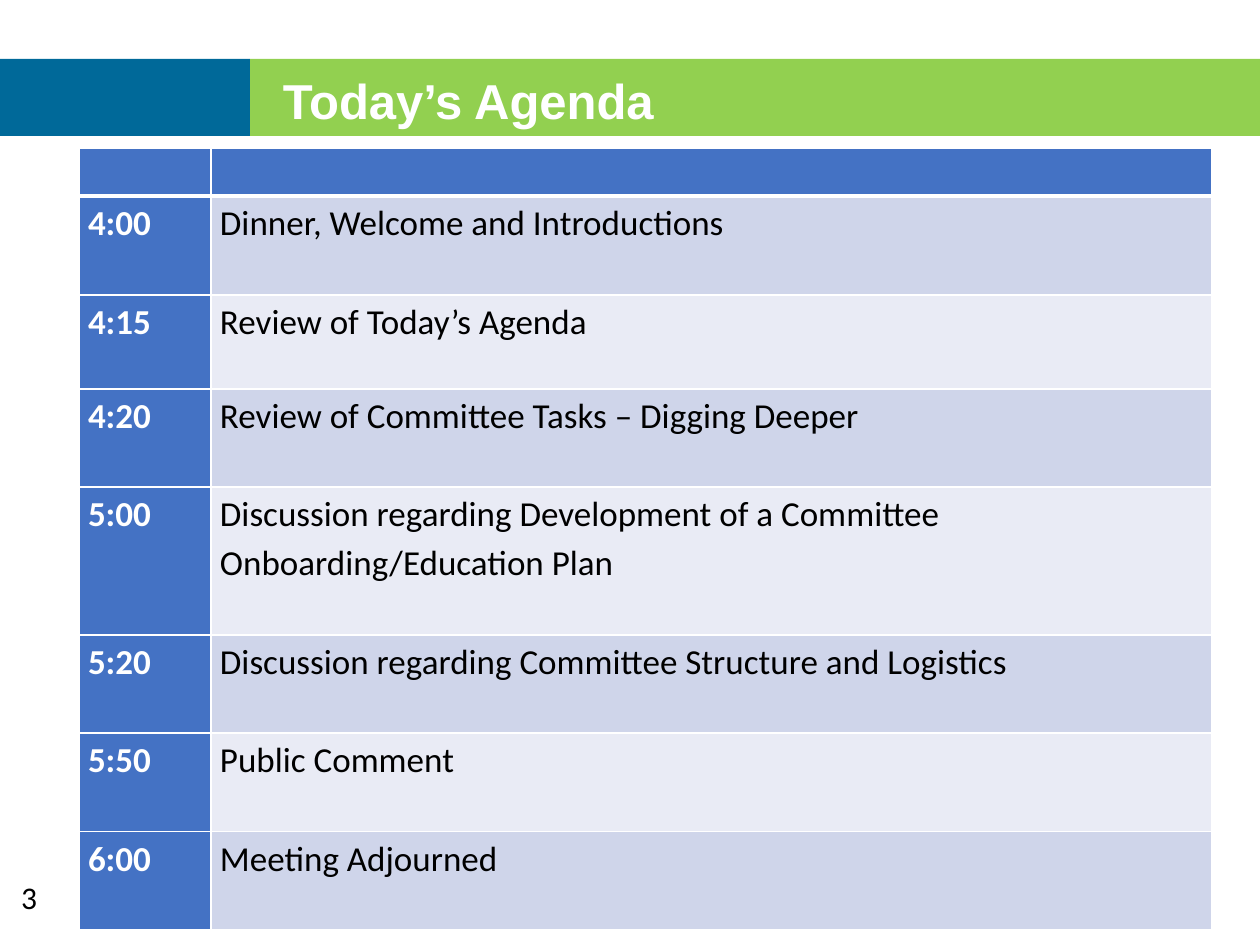
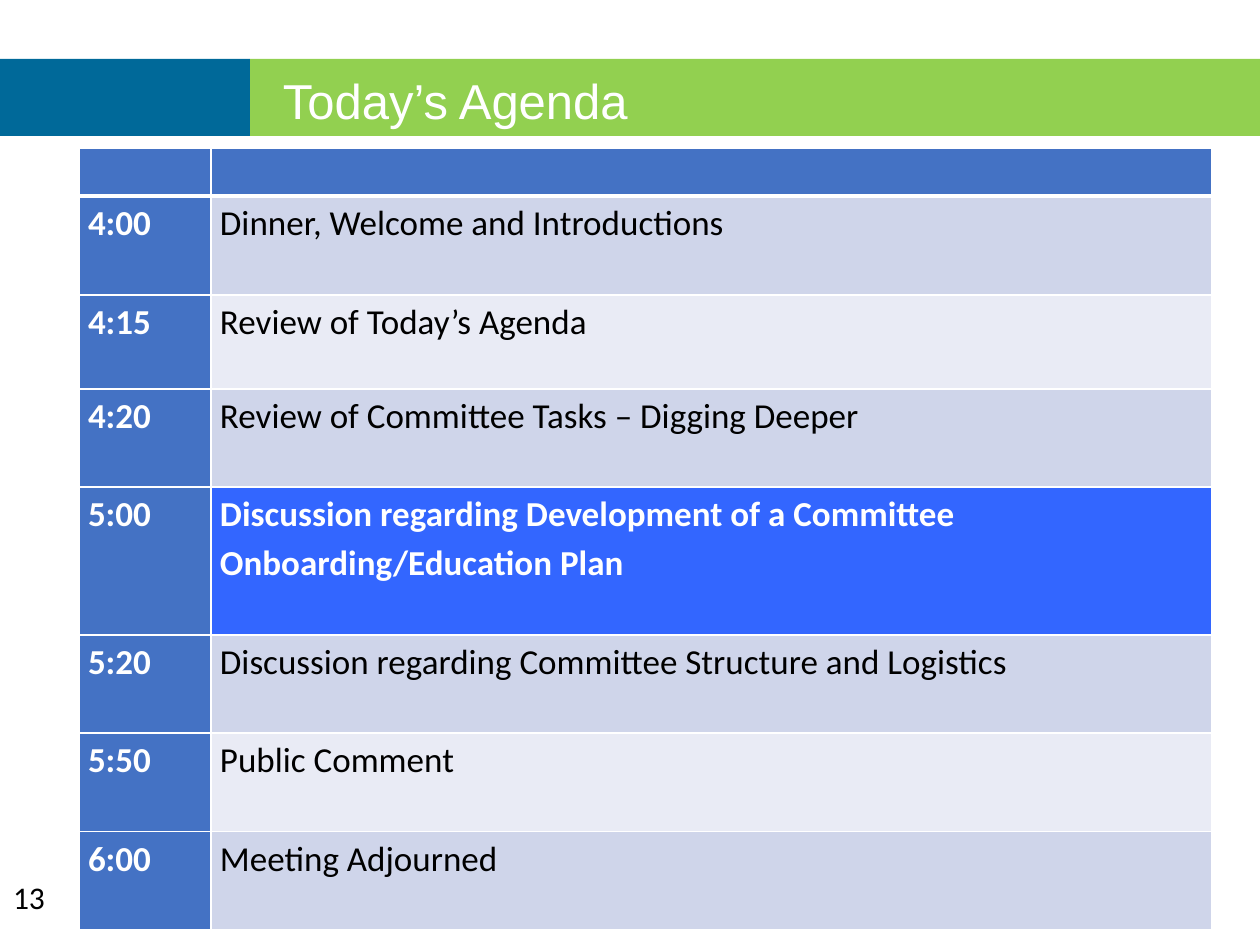
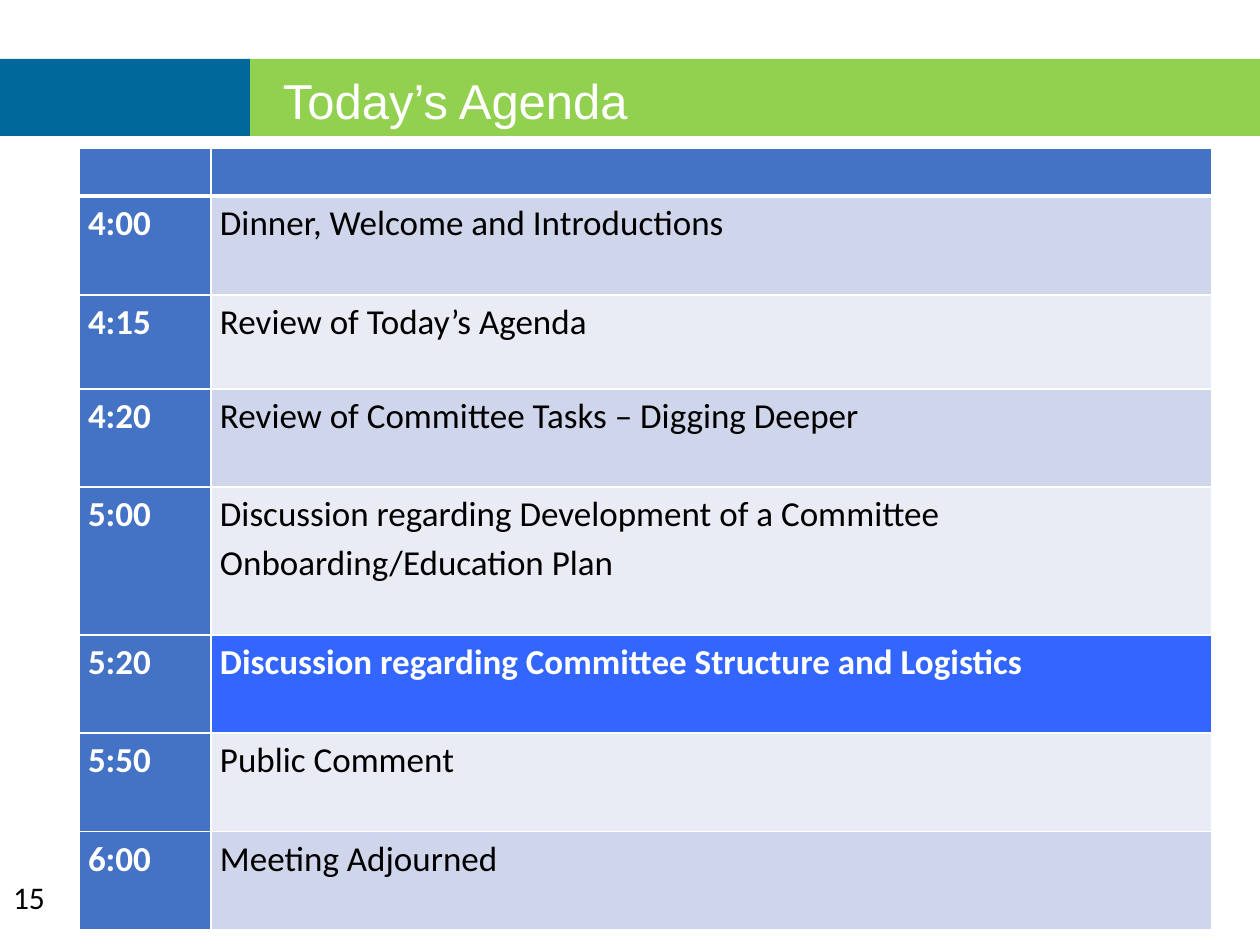
from lxml import etree
from pptx import Presentation, util as u
from pptx.dml.color import RGBColor
from pptx.enum import shapes, text
from pptx.oxml.ns import qn

COLORS = {
    "white": "FFFFFF", "black": "000000", "green": "92D050", "teal": "006999",
    "head": "4472C4", "odd": "CFD5EA", "even": "E9EBF5", "focus": "3366FF",
}
SCALE = 914400 / 126
WIDE, HIGH = 1260, 945

# Time, topic and row height
AGENDA = [
    ("4:00", "Dinner, Welcome and Introductions", 99),
    ("4:15", "Review of Today’s Agenda", 94),
    ("4:20", "Review of Committee Tasks – Digging Deeper", 98),
    ("5:00", "Discussion regarding Development of a Committee "
             "Onboarding/Education Plan", 148),
    ("5:20", "Discussion regarding Committee Structure and Logistics", 98),
    ("5:50", "Public Comment", 99),
    ("6:00", "Meeting Adjourned", 98),
]
HEAD_ROW = 48
COLS = (132, 1001)

# Page number, bold title, time of the current topic
PAGES = [(3, True, None), (13, False, "5:00"), (15, False, "5:20")]


def px(n):
    return u.Emu(round(n * SCALE))


def rgb(name):
    return RGBColor.from_string(COLORS[name])


def put(item, **vals):
    for key, val in vals.items():
        setattr(item, key, val)


class Deck:
    title = dict(name="Arial", size=u.Pt(28))
    page = dict(name="Calibri", size=u.Pt(18))
    body = dict(name="Calibri", size=u.Pt(20))

    def __init__(self):
        self.prs = Presentation()
        put(self.prs, slide_width=px(WIDE), slide_height=px(HIGH))
        self.slide = None

    def start(self):
        self.slide = self.prs.slides.add_slide(self.prs.slide_layouts[6])

    def band(self, x, y, w, h, color):
        box = self.slide.shapes.add_shape(
            shapes.MSO_SHAPE.RECTANGLE, px(x), px(y), px(w), px(h))
        box.shadow.inherit = False
        box.fill.solid()
        box.fill.fore_color.rgb = rgb(color)
        box.line.fill.background()

    def words(self, para, line, color, font, bold=False):
        run = para.add_run()
        run.text = line
        put(run.font, bold=bold, **font)
        run.font.color.rgb = rgb(color)

    def label(self, x, y, w, h, line, color, font, bold=False,
              align=text.PP_ALIGN.LEFT, side=13):
        frame = self.slide.shapes.add_textbox(
            px(x), px(y), px(w), px(h)).text_frame
        put(frame, word_wrap=True, margin_left=px(side), margin_right=px(side))
        para = frame.paragraphs[0]
        para.alignment = align
        self.words(para, line, color, font, bold)

    def edge(self, cell, **widths):
        props = cell._tc.get_or_add_tcPr()
        for side in "LRTB":
            line = etree.SubElement(props, qn(f"a:ln{side}"),
                                    w=str(u.Pt(widths.get(side, 1))))
            fill = etree.SubElement(line, qn("a:solidFill"))
            etree.SubElement(fill, qn("a:srgbClr"), val=COLORS["white"])

    def cell(self, cell, fill, line="", color="white", bold=False, **widths):
        put(cell, margin_left=px(9), margin_right=px(9),
            margin_top=0, margin_bottom=0)
        self.edge(cell, **widths)
        cell.fill.solid()
        cell.fill.fore_color.rgb = rgb(fill)
        if line:
            para = cell.text_frame.paragraphs[0]
            para.line_spacing = 1.15
            self.words(para, line, color, self.body, bold)

    def table(self, x, y, rows, focus):
        highs = [HEAD_ROW] + [row[2] for row in rows]
        grid = self.slide.shapes.add_table(
            len(highs), len(COLS), px(x), px(y),
            px(sum(COLS)), px(sum(highs))).table
        for col, wide in zip(grid.columns, COLS):
            col.width = px(wide)
        for row, high in zip(grid.rows, highs):
            row.height = px(high)
        for col in range(len(COLS)):
            self.cell(grid.cell(0, col), "head", B=3)
        for i, (time, topic, _) in enumerate(rows, 1):
            top = 3 if i == 1 else 1
            now = time == focus
            fill = "focus" if now else "odd" if i % 2 else "even"
            self.cell(grid.cell(i, 0), "head", time, bold=True, T=top)
            self.cell(grid.cell(i, 1), fill, topic,
                      "white" if now else "black", now, T=top)

    def agenda(self, number, bold, focus):
        self.start()
        # Title bands
        self.band(250, 59, 1010, 77, "green")
        self.band(0, 59, 250, 77, "teal")
        self.label(270, 64, 959, 81, "Today’s Agenda", "white",
                   self.title, bold)
        # Page number
        self.label(0, 872, 58, 50, str(number), "black", self.page,
                   align=text.PP_ALIGN.CENTER, side=0)
        # Schedule
        self.table(79, 148, AGENDA, focus)


def main():
    deck = Deck()
    for page in PAGES:
        deck.agenda(*page)
    deck.prs.save("out.pptx")


if __name__ == "__main__":
    main()
